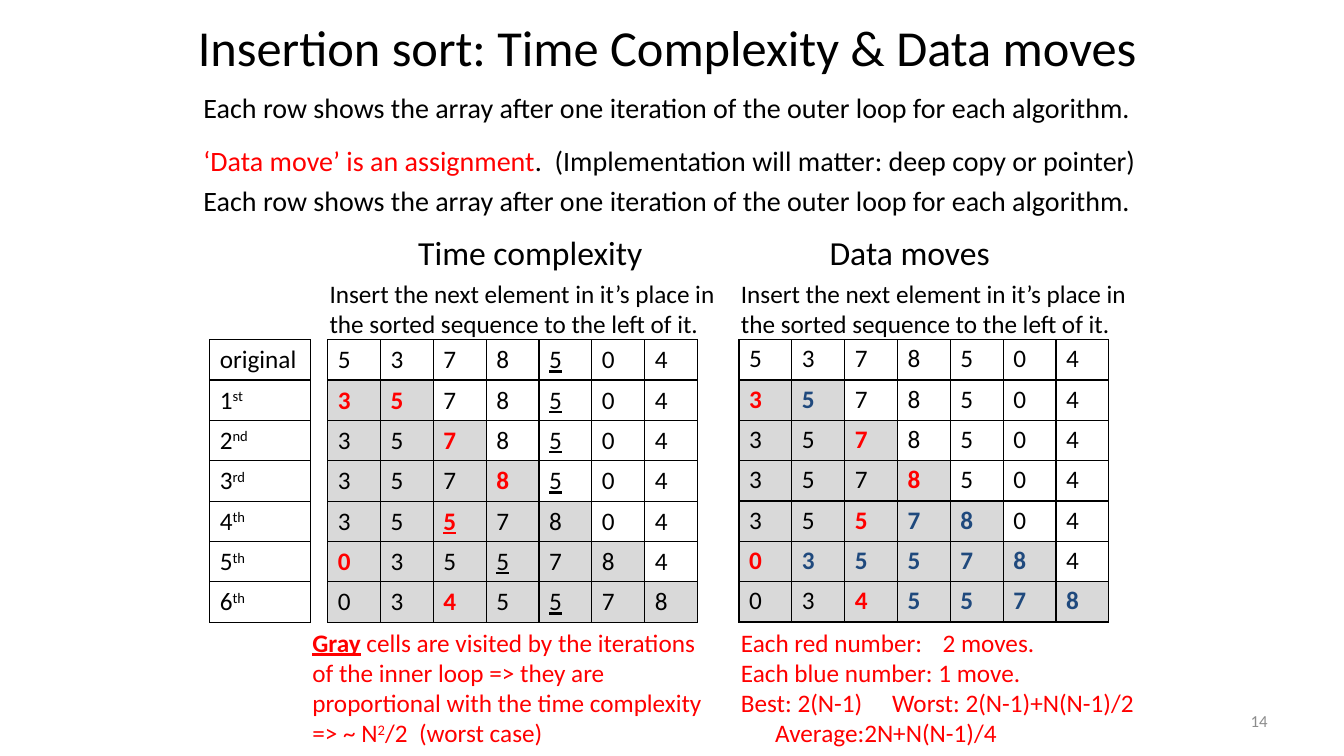
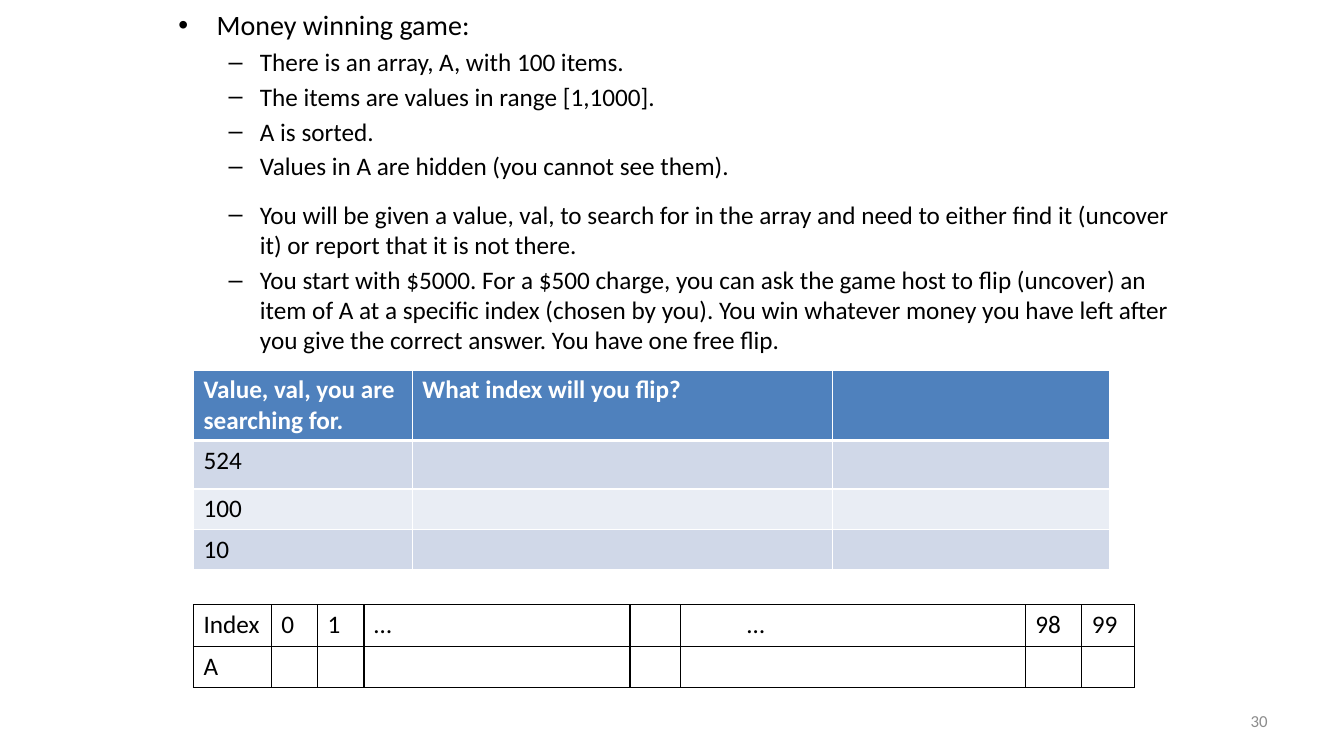
from lxml.etree import SubElement
from pptx import Presentation
from pptx.dml.color import RGBColor
from pptx.enum.text import MSO_ANCHOR as Anchor, PP_ALIGN as Align
from pptx.oxml.ns import qn
from pptx.util import Inches, Pt

COLORS = {
    "black": "000000", "white": "FFFFFF", "red": "FF0000", "navy": "1F497D",
    "visited": "D9D9D9", "number": "8C8C8C",
    "header": "4F81BD", "band_dark": "D0D8E8", "band_light": "E9EDF4",
}
RED = {"color": "red"}
SUPER = {"raised": True}
# Marks that may stand before a value in an array row
MARKS = {
    "*": {"color": "red", "bold": True},
    "+": {"color": "navy", "bold": True},
    "_": {"underline": True},
}


def rgb(name):
    return RGBColor.from_string(COLORS[name])


class Deck:
    """Holds the shared style and the current slide."""
    FONT = "Calibri"

    def __init__(self):
        self.prs = Presentation()
        self.prs.slide_width, self.prs.slide_height = Inches(13.33), Inches(7.5)
        self.slide = None

    def new_slide(self, number):
        self.slide = self.prs.slides.add_slide(self.prs.slide_layouts[6])
        self.text(9.56, 6.95, 3.11, 0.4, [str(number)], size=12, color="number",
                  align=Align.RIGHT, anchor=Anchor.MIDDLE)

    def title(self, wording):
        self.text(1.83, 0.08, 9.58, 0.77, [wording], size=36,
                  align=Align.CENTER, anchor=Anchor.MIDDLE)

    def runs(self, paragraph, content, **base):
        """Content is a string, or a list of strings and (string, format) pairs."""
        for part in [content] if isinstance(content, str) else content:
            wording, extra = (part, {}) if isinstance(part, str) else part
            style = {"color": "black", "size": 18, **base, **extra}
            run = paragraph.add_run()
            run.text = wording
            run.font.color.rgb = rgb(style.pop("color"))
            if style.pop("raised", False):
                run.font._element.set("baseline", "30000")
            style.update(name=self.FONT, size=Pt(style["size"]))
            for name, value in style.items():
                setattr(run.font, name, value)

    def layout(self, paragraph, before=0, left=0, hang=0, bullet=None, tab=None):
        paragraph.space_before = Pt(before)
        props = paragraph._p.get_or_add_pPr()
        props.set("marL", str(Inches(left)))
        props.set("indent", str(Inches(-hang)))
        if bullet:
            SubElement(props, qn("a:buFont")).set("typeface", "Arial")
            SubElement(props, qn("a:buChar")).set("char", bullet)
        if tab:
            stop = SubElement(SubElement(props, qn("a:tabLst")), qn("a:tab"))
            stop.set("pos", str(Inches(tab)))
            stop.set("algn", "l")

    def text(self, x, y, w, h, paragraphs, align=Align.LEFT, anchor=Anchor.TOP, **style):
        """A paragraph is its content, or a (content, layout dict) pair."""
        frame = self.slide.shapes.add_textbox(*map(Inches, (x, y, w, h))).text_frame
        frame.word_wrap, frame.vertical_anchor = True, anchor
        for i, item in enumerate(paragraphs):
            content, layout = item if isinstance(item, tuple) else (item, {})
            paragraph = frame.add_paragraph() if i else frame.paragraphs[0]
            paragraph.alignment = align
            self.layout(paragraph, **layout)
            self.runs(paragraph, content, **style)

    def table(self, x, y, widths, heights, rows, border="black", fill=None,
              header=False, pad=0.05):
        """fill(row, column) gives a colour name or None."""
        table = self.slide.shapes.add_table(
            len(heights), len(widths), Inches(x), Inches(y),
            Inches(sum(widths)), Inches(sum(heights))).table
        table.first_row, table.horz_banding = header, False
        for column, width in zip(table.columns, widths):
            column.width = Inches(width)
        for r, (row, height) in enumerate(zip(rows, heights)):
            table.rows[r].height = Inches(height)
            for c, content in enumerate(row):
                cell = table.cell(r, c)
                cell.margin_top = cell.margin_bottom = Inches(pad)
                heading = header and r == 0
                self.borders(cell, border, bottom=3 if heading or (header and r == 0) else 1)
                shade = fill(r, c) if fill else None
                if shade:
                    cell.fill.solid()
                    cell.fill.fore_color.rgb = rgb(shade)
                else:
                    cell.fill.background()
                if content:
                    style = {"color": "white", "bold": True} if heading else {}
                    self.runs(cell.text_frame.paragraphs[0], content, **style)
        return table

    def borders(self, cell, color, bottom):
        props = cell._tc.get_or_add_tcPr()
        for side, points in (("L", 1), ("R", 1), ("T", 1), ("B", bottom)):
            line = SubElement(props, qn(f"a:ln{side}"))
            line.set("w", str(Pt(points)))
            SubElement(SubElement(line, qn("a:solidFill")),
                       qn("a:srgbClr")).set("val", COLORS[color])


def array_row(line):
    """Turn '*3 +5 7' into cell contents with formats."""
    cells = []
    for value in line.split():
        style = {}
        while value[0] in MARKS:
            style.update(MARKS[value[0]])
            value = value[1:]
        cells.append([(value, style)])
    return cells


def visited(row, column):
    return "visited" if 0 < row >= column else None


def insertion_sort(deck):
    deck.new_slide(14)
    deck.title("Insertion sort: Time Complexity & Data moves")

    # Introduction
    rows_note = ("Each row shows the array after one iteration of the outer loop "
                 "for each algorithm.")
    deck.text(1.92, 0.85, 9.5, 1.75, [
        rows_note,
        ([("‘Data move’ is an assignment", RED),
          ".  (Implementation will matter: deep copy or pointer)"], {"before": 13.4}),
        (rows_note, {"before": 4.9}),
    ], size=20)

    # Iteration labels
    heights = [0.4] * 7
    ordinals = ["st", "nd", "rd", "th", "th", "th"]
    labels = [["original"]] + [[[str(i), (suffix, SUPER)]]
                               for i, suffix in enumerate(ordinals, 1)]
    deck.table(2.08, 3.37, [1], heights, labels)

    # The two traces, each with heading and rule
    time_trace = ["5 3 7 8 _5 0 4", "*3 *5 7 8 _5 0 4", "3 5 *7 8 _5 0 4",
                  "3 5 7 *8 _5 0 4", "3 5 *_5 7 8 0 4", "*0 3 5 _5 7 8 4",
                  "0 3 *4 5 _5 7 8"]
    move_trace = ["5 3 7 8 5 0 4", "*3 +5 7 8 5 0 4", "3 5 *7 8 5 0 4",
                  "3 5 7 *8 5 0 4", "3 5 *5 +7 +8 0 4", "*0 +3 +5 +5 +7 +8 4",
                  "0 3 *4 +5 +5 +7 +8"]
    for heading, heading_x, rule_x, trace_x, trace, pad in (
            ("Time complexity", 4.05, 3.17, 3.25, time_trace, 0.05),
            ("Data moves", 8.13, 7.25, 7.33, move_trace, 0.04)):
        deck.text(heading_x, 2.25, 2.5, 0.5, [heading], size=24)
        deck.text(rule_x, 2.71, 4.25, 0.71, [
            "Insert the next element in it’s place in the sorted sequence "
            "to the left of it."])
        deck.table(trace_x, 3.37, [3.67 / 7] * 7, heights,
                   [array_row(line) for line in trace], fill=visited, pad=pad)

    # Conclusions
    deck.text(3, 6.17, 4.08, 1.31, [[
        ("Gray", {"bold": True, "underline": True}),
        " cells are visited by the iterations of the inner loop => they are "
        "proportional with the time complexity => ~ N",
        ("2", SUPER), "/2  (worst case)"]], **RED)
    deck.text(7.25, 6.17, 4.42, 1.31, [
        ("Each red number:\t2 moves.", {"tab": 1.97}),
        "Each blue number: 1 move.",
        ("Best: 2(N-1)\tWorst: 2(N-1)+N(N-1)/2", {"tab": 1.77}),
        ("Average:2N+N(N-1)/4", {"left": 0.34}),
    ], **RED)


def money_game(deck):
    deck.new_slide(30)

    # Rules of the game
    rules = [
        "There is an array, A, with 100 items.",
        "The items are values in range [1,1000].",
        "A is sorted.",
        "Values in A are hidden (you cannot see them).",
        "You will be given a value, val, to search for in the array and need to "
        "either find it (uncover it) or report that it is not there.",
        "You start with $5000. For a $500 charge, you can ask the game host to flip "
        "(uncover) an item of A at a specific index (chosen by you). You win whatever "
        "money you have left after you give the correct answer. You have one free flip.",
    ]
    game = [([("Money winning game:", {"size": 20})],
             {"left": 0.38, "hang": 0.38, "bullet": "•"})]
    game += [(rule, {"left": 0.81, "hang": 0.31, "bullet": "–",
                     "before": 13 if i == 4 else 3.3})
             for i, rule in enumerate(rules)]
    deck.text(1.67, 0.03, 10.08, 4.14, game)

    # Values to search for
    bands = ["header", "band_dark", "band_light", "band_dark"]
    deck.table(1.92, 3.67, [2.17, 4.17, 2.75], [0.7, 0.48, 0.4, 0.4], [
        ["Value, val, you are searching for.", "What index will you flip?", ""],
        *([value, "", ""] for value in ("524", "100", "10")),
    ], border="white", fill=lambda row, column: bands[row], header=True)

    # The hidden array
    hidden = deck.table(
        1.92, 6, [0.77, 0.46, 0.46, 2.64, 0.5, 3.42, 0.56, 0.52], [0.41] * 2,
        [["Index", "0", "1", "…", "", "…", "98", "99"], ["A"] + [""] * 7])
    hidden.cell(0, 5).margin_left = Inches(0.66)


def main():
    deck = Deck()
    insertion_sort(deck)
    money_game(deck)
    deck.prs.save("out.pptx")


if __name__ == "__main__":
    main()
